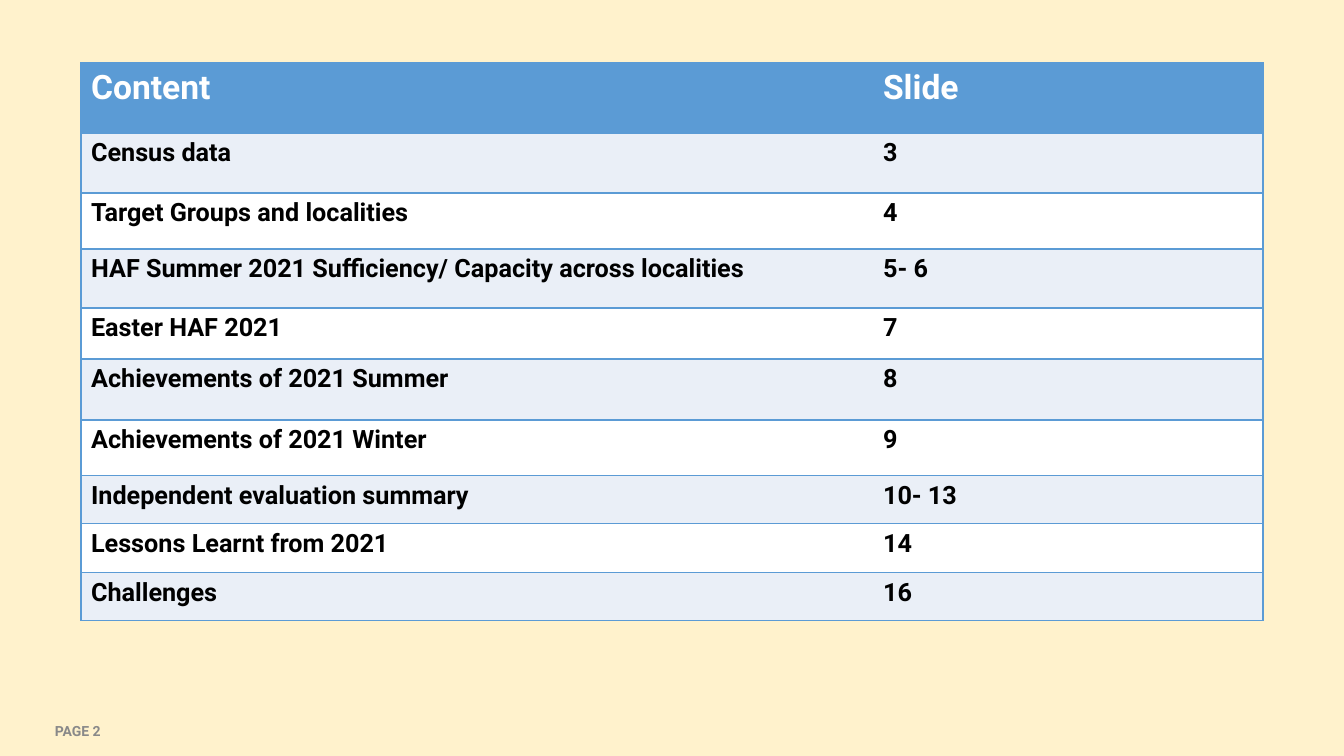
from dataclasses import dataclass

from lxml import etree
from pptx import Presentation
from pptx.dml.color import RGBColor
from pptx.enum.text import MSO_ANCHOR
from pptx.oxml.ns import qn
from pptx.util import Pt

MIDDLE = MSO_ANCHOR.MIDDLE

HEADINGS = ("Content", "Slide")
CONTENTS = [
    ("Census data", "3"),
    ("Target Groups and localities", "4"),
    ("HAF Summer 2021 Sufficiency/ Capacity across localities", "5- 6"),
    ("Easter HAF 2021", "7"),
    ("Achievements of 2021 Summer", "8"),
    ("Achievements of 2021 Winter", "9"),
    ("Independent evaluation summary", "10- 13"),
    ("Lessons Learnt from 2021", "14"),
    ("Challenges", "16"),
]
PAGE_LABEL = "PAGE 2"

# Lengths in px
SLIDE_SIZE = (1344, 756)
TABLE_LEFT, TABLE_TOP = 81, 63
COLUMN_WIDTHS = (792, 390)
ROW_HEIGHTS = (70, 60, 56, 59, 51, 61, 56, 48, 49, 48)
PAGE_LABEL_BOX = (45, 711, 255, 40)


@dataclass(frozen=True)
class Theme:
    font: str = "Roboto"
    background: str = "FFF2CC"
    accent: str = "5B9BD5"
    bands: tuple = ("FFFFFF", "EAEFF7")
    heading_text: str = "FFFFFF"
    body_text: str = "000000"
    page_text: str = "898989"
    heading_size: int = 24
    body_size: int = 18
    page_size: int = 10
    border_width: int = 1


THEME = Theme()


def px(length):
    return round(length * 914400 / 100.8)


def paint(fill, color):
    fill.solid()
    fill.fore_color.rgb = RGBColor.from_string(color)


def write(text_frame, text, size, color):
    run = text_frame.paragraphs[0].add_run()
    run.text = text
    run.font.name = THEME.font
    run.font.size = Pt(size)
    run.font.bold = True
    run.font.color.rgb = RGBColor.from_string(color)


def set_borders(cell, drawn_sides):
    """Draw the given sides (letters of LRTB) and clear the others."""
    properties = cell._tc.get_or_add_tcPr()
    for position, side in enumerate("LRTB"):
        border = etree.Element(qn(f"a:ln{side}"), w=str(Pt(THEME.border_width)))
        if side in drawn_sides:
            solid = etree.SubElement(border, qn("a:solidFill"))
            etree.SubElement(solid, qn("a:srgbClr"), val=THEME.accent)
        else:
            etree.SubElement(border, qn("a:noFill"))
        properties.insert(position, border)


def add_contents_table(slide):
    rows = [HEADINGS, *CONTENTS]
    contents = slide.shapes.add_table(
        len(rows), len(HEADINGS), px(TABLE_LEFT), px(TABLE_TOP),
        px(sum(COLUMN_WIDTHS)), px(sum(ROW_HEIGHTS))).table
    contents.horz_banding = False
    for column, width in zip(contents.columns, COLUMN_WIDTHS):
        column.width = px(width)
    for row, height in zip(contents.rows, ROW_HEIGHTS):
        row.height = px(height)

    for row_index, entry in enumerate(rows):
        if row_index == 0:
            fill, size, color = THEME.accent, THEME.heading_size, THEME.heading_text
        else:
            fill, size, color = THEME.bands[row_index % 2], THEME.body_size, THEME.body_text
        for column_index, text in enumerate(entry):
            cell = contents.cell(row_index, column_index)
            paint(cell.fill, fill)
            write(cell.text_frame, text, size, color)
            set_borders(cell, "LTB" if column_index == 0 else "RTB")


def add_page_label(slide):
    label = slide.shapes.add_textbox(*map(px, PAGE_LABEL_BOX)).text_frame
    label.word_wrap = True
    label.vertical_anchor = MIDDLE
    write(label, PAGE_LABEL, THEME.page_size, THEME.page_text)


def main():
    deck = Presentation()
    deck.slide_width, deck.slide_height = map(px, SLIDE_SIZE)
    slide = deck.slides.add_slide(deck.slide_layouts[6])
    paint(slide.background.fill, THEME.background)
    add_page_label(slide)
    add_contents_table(slide)
    deck.save("out.pptx")


if __name__ == "__main__":
    main()
